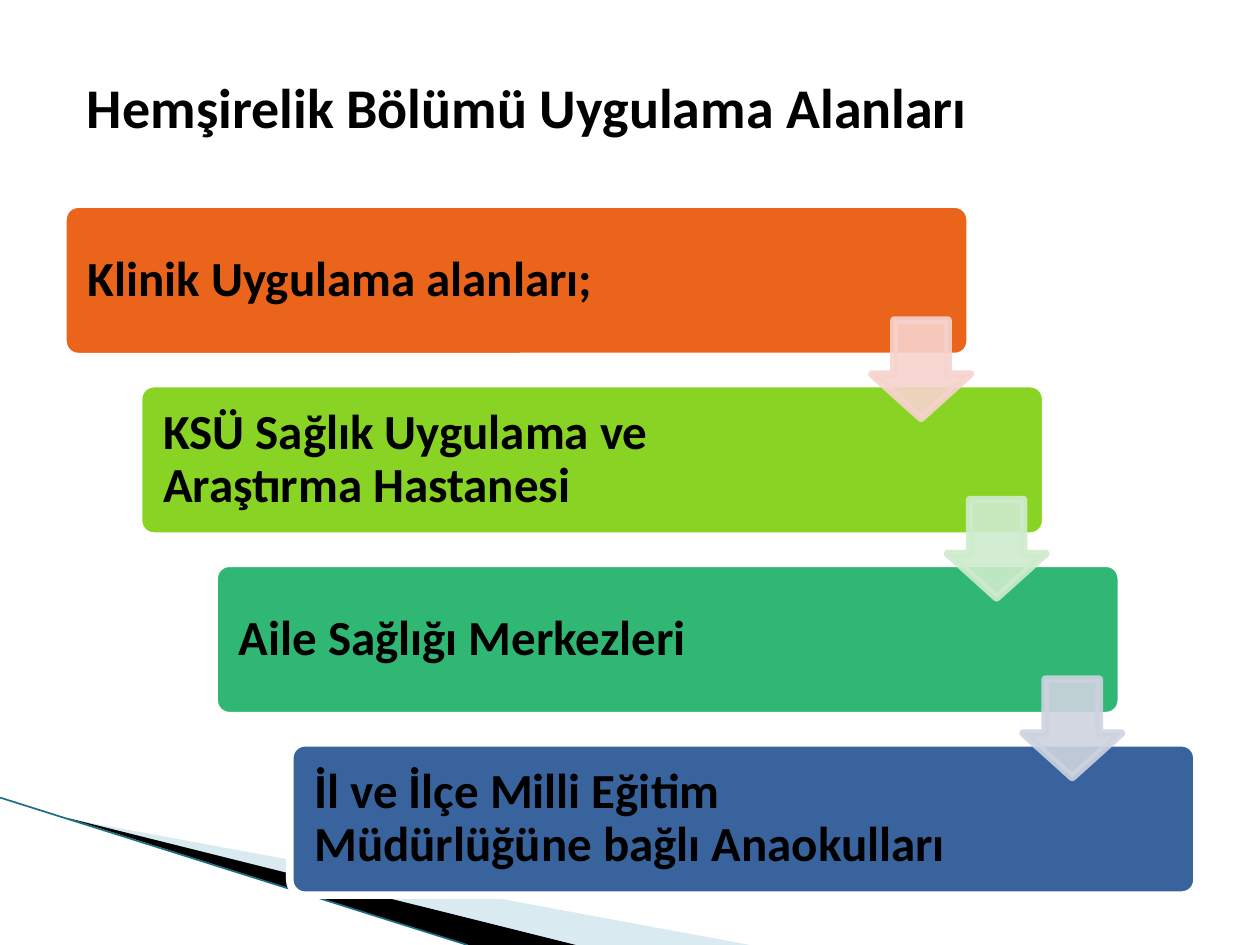
from dataclasses import dataclass

from lxml.etree import SubElement
from pptx import Presentation
from pptx.dml.color import RGBColor
from pptx.enum.shapes import MSO_CONNECTOR as Connector, MSO_SHAPE as Shape
from pptx.enum.text import MSO_ANCHOR as Anchor, PP_ALIGN as Align
from pptx.oxml.ns import qn
from pptx.util import Inches, Pt

STEP_LEFT, STEP_TOP = 0.5, 1.62
STEP_WIDTH, STEP_HEIGHT = 7.2, 1.21
SHIFT_X, SHIFT_Y = 0.6, 1.425
ARROW_LEFT, ARROW_TOP, ARROW_SIZE = 6.92, 2.54, 0.78
BORDER = 4.33


@dataclass
class Step:
    text: str
    fill: str
    arrow: str | None = None


@dataclass
class Wedge:
    points: list[tuple[float, float]]
    fill: str
    opacity: int = 100


STEPS = [
    Step("Klinik Uygulama alanları;", "EB641B", "F7D3CD"),
    Step("KSÜ Sağlık Uygulama ve Araştırma Hastanesi", "88D323", "CEECCC"),
    Step("Aile Sağlığı Merkezleri", "2FB773", "CED3DF"),
    Step("İl ve İlçe Milli Eğitim Müdürlüğüne bağlı Anaokulları", "39639D"),
]
WEDGES = [
    Wedge([(0.55, 6.5), (5.95, 7.5), (4.56, 7.5)], "A0CBDC", 40),
    Wedge([(0.53, 6.49), (4.57, 7.5), (3.72, 7.5)], "000000"),
]


def color(value: str) -> RGBColor:
    """Turn a hex string into a colour."""
    return RGBColor.from_string(value)


def apply(target, values: dict) -> None:
    """Set each named attribute on the target."""
    for name, value in values.items():
        setattr(target, name, value)


def set_opacity(shape, percent: int) -> None:
    """Make the fill and line of a shape partly transparent."""
    for tint in shape._element.spPr.iter(qn("a:srgbClr")):
        SubElement(tint, qn("a:alpha"), val=str(percent * 1000))


def paint(shape, fill: str, line: str | None = None, opacity: int = 100) -> None:
    """Give a shape a flat fill and an optional border."""
    shape.shadow.inherit = False
    shape.fill.solid()
    shape.fill.fore_color.rgb = color(fill)
    if line:
        shape.line.color.rgb = color(line)
        shape.line.width = Pt(BORDER)
    else:
        shape.line.fill.background()
    if opacity < 100:
        set_opacity(shape, opacity)


def write(frame, text: str, size: int, layout: dict, spacing: float = 1.0) -> None:
    """Write one bold black paragraph into a text frame."""
    apply(frame, {"word_wrap": True, "vertical_anchor": Anchor.MIDDLE, **layout})
    paragraph = frame.paragraphs[0]
    paragraph.text = text
    apply(paragraph, {"alignment": Align.LEFT, "line_spacing": spacing})
    apply(paragraph.font, {"name": "Calibri", "size": Pt(size), "bold": True})
    paragraph.font.color.rgb = color("000000")


def draw_wedge(shapes, wedge: Wedge) -> None:
    """Draw one wedge of the corner decoration."""
    corners = [(Inches(x), Inches(y)) for x, y in wedge.points]
    builder = shapes.build_freeform(*corners[0])
    builder.add_line_segments(corners[1:])
    paint(builder.convert_to_shape(), wedge.fill, opacity=wedge.opacity)


def draw_edge(shapes) -> None:
    """Draw the thin line along the corner decoration."""
    edge = shapes.add_connector(
        Connector.STRAIGHT, Inches(0), Inches(6.33), Inches(3.71), Inches(7.5)
    )
    edge.line.color.rgb = color("1B6F82")
    edge.line.width = Pt(0.95)
    SubElement(edge._element.spPr, qn("a:effectLst"))


def draw_step(shapes, index: int, step: Step) -> None:
    """Draw one box of the staircase."""
    box = shapes.add_shape(
        Shape.ROUNDED_RECTANGLE,
        Inches(STEP_LEFT + index * SHIFT_X), Inches(STEP_TOP + index * SHIFT_Y),
        Inches(STEP_WIDTH), Inches(STEP_HEIGHT),
    )
    box.adjustments[0] = 0.1
    paint(box, step.fill, "FFFFFF")
    insets = {"margin_left": Inches(0.16), "margin_right": Inches(1.54)}
    write(box.text_frame, step.text, 28, insets, spacing=0.9)


def draw_arrow(shapes, index: int, fill: str) -> None:
    """Draw the arrow from one box to the next."""
    arrow = shapes.add_shape(
        Shape.DOWN_ARROW,
        Inches(ARROW_LEFT + index * SHIFT_X), Inches(ARROW_TOP + index * SHIFT_Y),
        Inches(ARROW_SIZE), Inches(ARROW_SIZE),
    )
    arrow.adjustments[0], arrow.adjustments[1] = 0.55, 0.45
    paint(arrow, fill, fill, opacity=90)


def main() -> None:
    """Build the slide and save it."""
    deck = Presentation()
    apply(deck, {"slide_width": Inches(10), "slide_height": Inches(7.5)})
    slide = deck.slides.add_slide(deck.slide_layouts[5])
    shapes = slide.shapes

    for wedge in WEDGES:
        draw_wedge(shapes, wedge)
    draw_edge(shapes)
    for index, step in enumerate(STEPS):
        draw_step(shapes, index, step)
    for index, step in enumerate(STEPS):
        if step.arrow:
            draw_arrow(shapes, index, step.arrow)

    title = shapes.title
    apply(title, {"left": Inches(0.59), "top": Inches(0.52),
                  "width": Inches(8.28), "height": Inches(0.64)})
    write(title.text_frame, "Hemşirelik Bölümü Uygulama Alanları", 32, {})
    deck.save("out.pptx")


if __name__ == "__main__":
    main()
